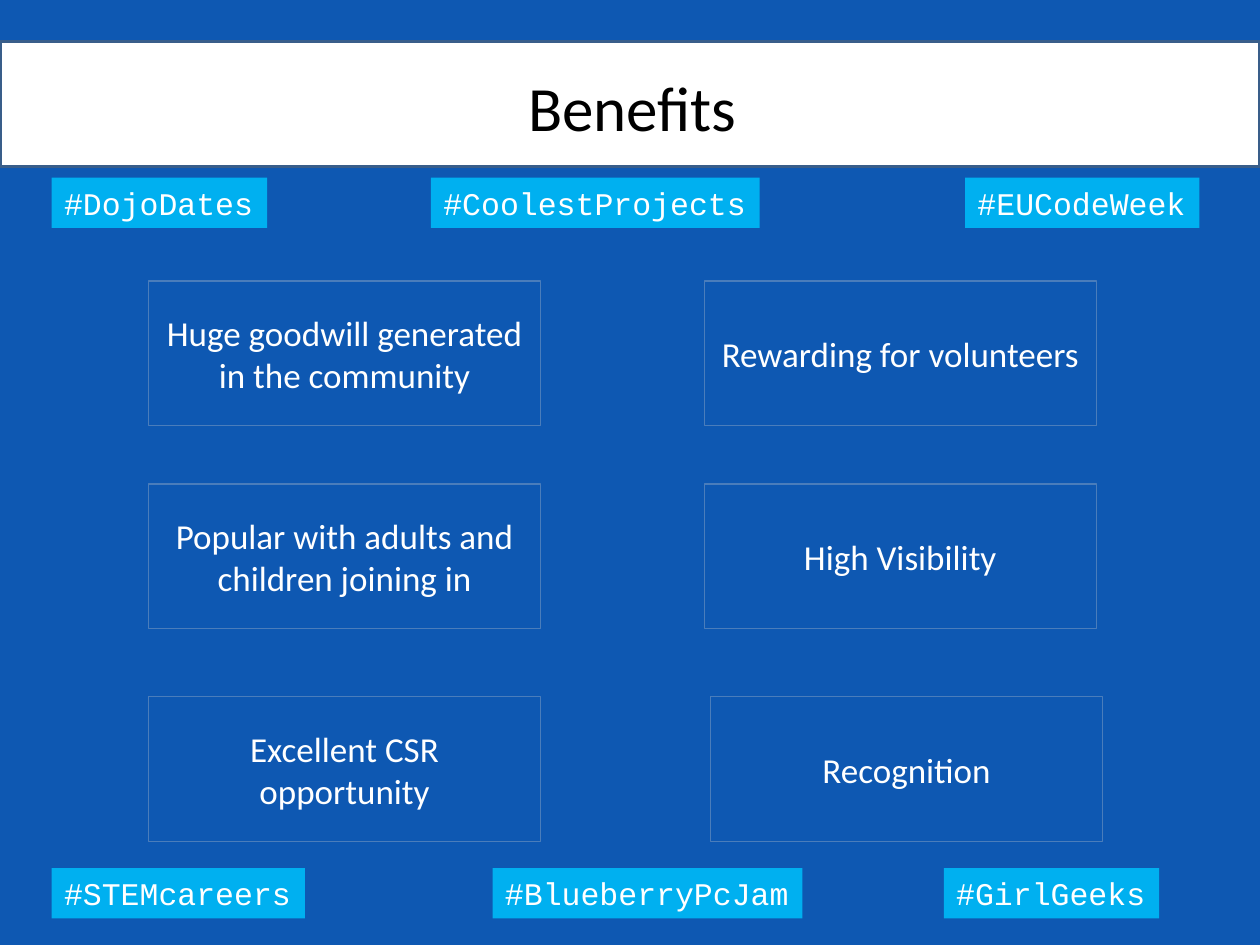
import pptx
import pptx.dml.color
import pptx.enum.shapes
import pptx.enum.text
import pptx.util
from pptx.util import Inches

COLOURS = {
    "blue": "0E58B2",
    "cyan": "00B0F0",
    "white": "FFFFFF",
    "black": "000000",
    "banner_edge": "395E8A",
    "box_edge": "4A7DBB",
}
ALIGN = pptx.enum.text.PP_ALIGN
ANCHOR = pptx.enum.text.MSO_ANCHOR

COLUMNS = (1.18, 5.59)
BENEFITS = [
    (COLUMNS[0], 2.23, "Huge goodwill generated\nin the community"),
    (COLUMNS[1], 2.23, "Rewarding for volunteers"),
    (COLUMNS[0], 3.84, "Popular with adults and children joining in"),
    (COLUMNS[1], 3.84, "High Visibility"),
    (COLUMNS[0], 5.53, "Excellent CSR opportunity"),
    (5.64, 5.53, "Recognition"),
]
HASHTAGS = [
    (0.41, 1.41, "#DojoDates"),
    (3.42, 1.41, "#CoolestProjects"),
    (7.66, 1.41, "#EUCodeWeek"),
    (0.41, 6.89, "#STEMcareers"),
    (3.91, 6.89, "#BlueberryPcJam"),
    (7.49, 6.89, "#GirlGeeks"),
]


def colour(name):
    return pptx.dml.color.RGBColor.from_string(COLOURS[name])


def write_text(box, text, size, font, ink, align, anchor):
    frame = box.text_frame
    frame.word_wrap = True
    frame.vertical_anchor = anchor
    para = frame.paragraphs[0]
    para.alignment = align
    for index, line in enumerate(text.split("\n")):
        if index:
            para.add_line_break()
        span = para.add_run()
        span.text = line
        span.font.size = pptx.util.Pt(size)
        span.font.name = font
        span.font.color.rgb = colour(ink)


def add_box(page, left, top, width, height, fill, edge=None, weight=0.75):
    box = page.shapes.add_shape(
        pptx.enum.shapes.MSO_SHAPE.RECTANGLE,
        Inches(left), Inches(top), Inches(width), Inches(height))
    box.shadow.inherit = False
    box.fill.solid()
    box.fill.fore_color.rgb = colour(fill)
    if edge:
        box.line.color.rgb = colour(edge)
        box.line.width = pptx.util.Pt(weight)
    else:
        box.line.fill.background()
    return box


def add_title(page, text):
    title = page.shapes.title
    title.left, title.top = Inches(0.52), Inches(0.22)
    title.width, title.height = Inches(9), Inches(1.25)
    write_text(title, text, 36, "Calibri", "black", ALIGN.CENTER, ANCHOR.MIDDLE)
    # Bring the title in front of the banner
    page.shapes._spTree.append(title._element)


def add_benefit(page, left, top, text):
    box = add_box(page, left, top, 3.11, 1.15, "blue", "box_edge")
    write_text(box, text, 20, "Calibri", "white", ALIGN.CENTER, ANCHOR.MIDDLE)


def add_hashtag(page, left, top, text):
    # Fixed-pitch text: the width follows the number of characters
    width = 0.21 + 0.15 * len(text)
    box = add_box(page, left, top, width, 0.4, "cyan")
    write_text(box, text, 18, "Courier New", "white", ALIGN.LEFT, ANCHOR.TOP)
    box.text_frame.word_wrap = False


def main():
    deck = pptx.Presentation()
    deck.slide_width, deck.slide_height = Inches(10), Inches(7.5)
    page = deck.slides.add_slide(deck.slide_layouts.get_by_name("Title Only"))
    page.background.fill.solid()
    page.background.fill.fore_color.rgb = colour("blue")

    # Banner and title
    add_box(page, 0, 0.33, 10, 0.99, "white", "banner_edge", 2)
    add_title(page, "Benefits")

    # Benefit boxes, then hashtag labels above and below them
    for benefit in BENEFITS:
        add_benefit(page, *benefit)
    for hashtag in HASHTAGS:
        add_hashtag(page, *hashtag)

    deck.save("out.pptx")


if __name__ == "__main__":
    main()
